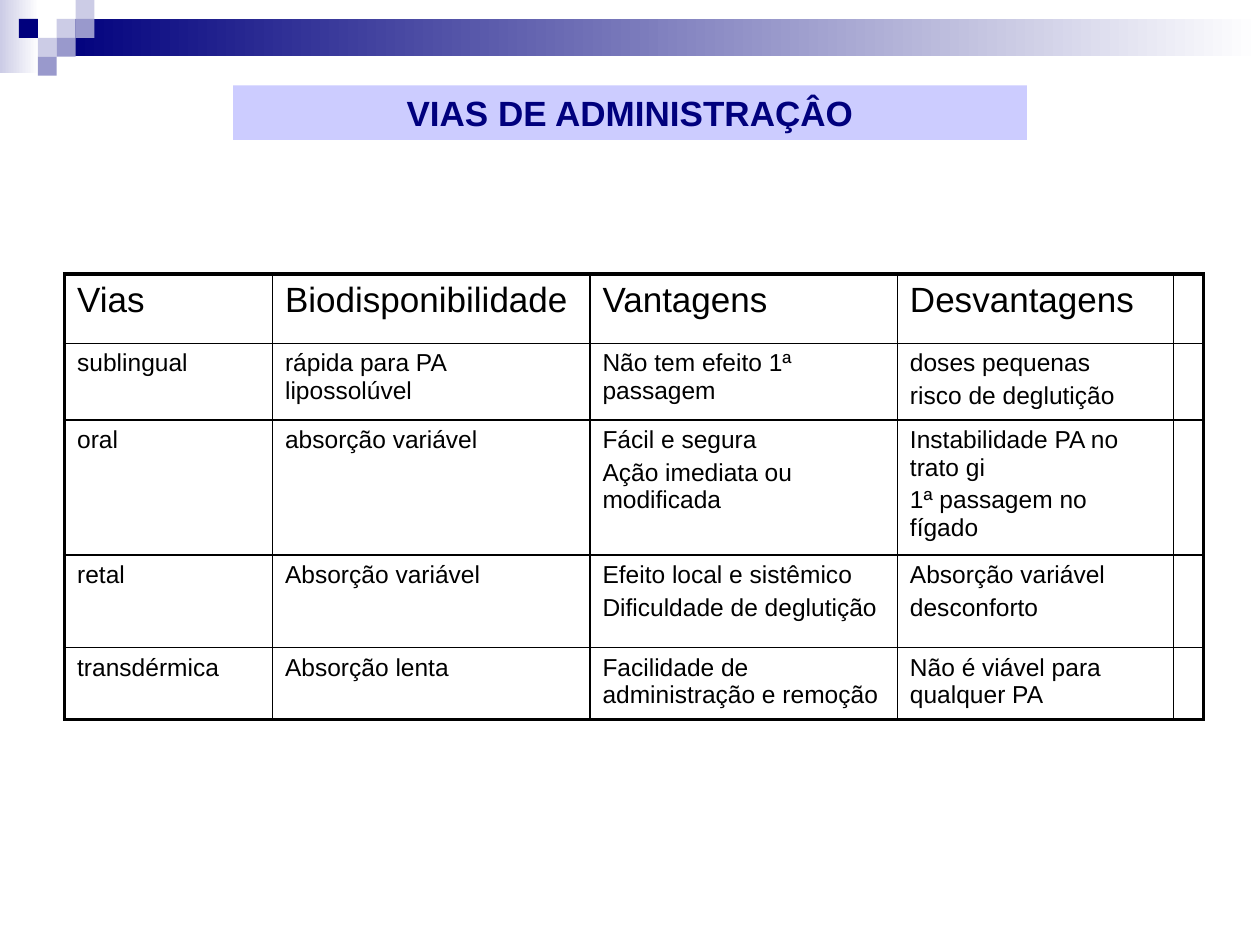
from dataclasses import dataclass
from lxml.etree import SubElement
from pptx import Presentation
from pptx.dml.color import RGBColor as Rgb
from pptx.enum.shapes import MSO_SHAPE as Shape
from pptx.enum.text import MSO_ANCHOR as Anchor, PP_ALIGN as Align
from pptx.oxml.ns import qn
from pptx.util import Pt


@dataclass(frozen=True)
class Theme:
    font: str = "Arial"
    navy: str = "00007D"
    mid: str = "9999CC"
    pale: str = "CCCCE6"
    band: str = "CCCCFF"
    white: str = "FFFFFF"
    black: str = "000000"
    head: float = 20
    body: float = 14
    thin: float = 1
    thick: float = 2.25


THEME = Theme()
COLS = [118.8, 181.4, 175.7, 157.7, 16.6]
# Row height, then the text of each cell; a line break starts a new paragraph
ROWS = [
    (39.6, ["Vias", "Biodisponibilidade", "Vantagens", "Desvantagens", ""]),
    (43.9, ["sublingual", "rápida para PA lipossolúvel",
            "Não tem efeito 1ª passagem",
            "doses pequenas\nrisco de deglutição", ""]),
    (77.1, ["oral", "absorção variável",
            "Fácil e segura\nAção imediata ou modificada",
            "Instabilidade PA no trato gi\n1ª passagem no fígado", ""]),
    (52.9, ["retal", "Absorção variável",
            "Efeito local e sistêmico\nDificuldade de deglutição",
            "Absorção variável\ndesconforto", ""]),
    (41.1, ["transdérmica", "Absorção lenta",
            "Facilidade de administração e remoção",
            "Não é viável para qualquer PA", ""]),
]


def add_rect(slide, x, y, w, h, color, end=None):
    """Plain rectangle, or a left-to-right gradient when end is given."""
    rect = slide.shapes.add_shape(Shape.RECTANGLE, Pt(x), Pt(y), Pt(w), Pt(h))
    rect.shadow.inherit = False
    rect.line.fill.background()
    if end:
        rect.fill.gradient()
        rect.fill.gradient_angle = 0
        for stop, tone in zip(rect.fill.gradient_stops, (color, end)):
            stop.color.rgb = Rgb.from_string(tone)
            stop.position = 0 if tone == color else 1
    else:
        rect.fill.solid()
        rect.fill.fore_color.rgb = Rgb.from_string(color)
    return rect


def set_font(para, size, color, bold=False):
    font = para.font
    font.name, font.size, font.bold = THEME.font, Pt(size), bold
    font.color.rgb = Rgb.from_string(color)


def add_banner(slide, x, y, w):
    """Gradient bars with a mosaic of small squares at the left."""
    unit = 10.8
    add_rect(slide, x, y, 22.3, 41.8, THEME.pale, THEME.white)
    add_rect(slide, x + 3 * unit, y + unit, w - 3 * unit, 2 * unit - 0.3,
             THEME.navy, THEME.white)
    tiles = [(3, 1, THEME.pale), (4, 0, THEME.pale), (4, 1, THEME.mid),
             (2, 2, THEME.pale), (1, 1, THEME.navy), (3, 2, THEME.mid),
             (2, 3, THEME.mid)]
    for col, row, color in tiles:
        add_rect(slide, x + col * unit, y + row * unit, unit, unit, color)


def add_title(slide, x, y, w, h):
    frame = add_rect(slide, x, y, w, h, THEME.band).text_frame
    frame.word_wrap = True
    frame.vertical_anchor = Anchor.TOP
    para = frame.paragraphs[0]
    para.text = "VIAS DE ADMINISTRAÇÂO"
    para.alignment = Align.CENTER
    set_font(para, THEME.head, THEME.navy, True)


def set_edges(cell, widths):
    """Borders in the order left, right, top, bottom, ahead of the fill."""
    props = cell._tc.get_or_add_tcPr()
    for index, (side, width) in enumerate(zip("LRTB", widths)):
        line = SubElement(props, qn(f"a:ln{side}"), w=str(Pt(width)))
        fill = SubElement(line, qn("a:solidFill"))
        SubElement(fill, qn("a:srgbClr"), val=THEME.black)
        props.insert(index, line)


def fill_cell(cell, text, size):
    cell.fill.background()
    cell.text = text
    for index, para in enumerate(cell.text_frame.paragraphs):
        set_font(para, size, THEME.black)
        if index:
            para.space_before = Pt(size * 0.2)


def add_grid(slide, x, y):
    height = sum(row[0] for row in ROWS)
    frame = slide.shapes.add_table(len(ROWS), len(COLS), Pt(x), Pt(y),
                                   Pt(sum(COLS)), Pt(height))
    table = frame.table
    table.first_row = table.horz_banding = False
    for col, width in zip(table.columns, COLS):
        col.width = Pt(width)
    last_row, last_col = len(ROWS) - 1, len(COLS) - 1
    for r, (tall, texts) in enumerate(ROWS):
        table.rows[r].height = Pt(tall)
        for c, text in enumerate(texts):
            cell = table.cell(r, c)
            fill_cell(cell, text, THEME.body if r else THEME.head)
            outer = (c == 0, c == last_col, r == 0, r == last_row)
            set_edges(cell, [THEME.thick if edge else THEME.thin
                             for edge in outer])


def main():
    deck = Presentation()
    deck.slide_width, deck.slide_height = Pt(720), Pt(540)
    slide = deck.slides.add_slide(deck.slide_layouts[6])
    add_banner(slide, 0, 0, 720)
    add_title(slide, 133.2, 48.8, 453.6, 31.2)
    add_grid(slide, 36.9, 156.6)
    deck.save("out.pptx")


if __name__ == "__main__":
    main()
